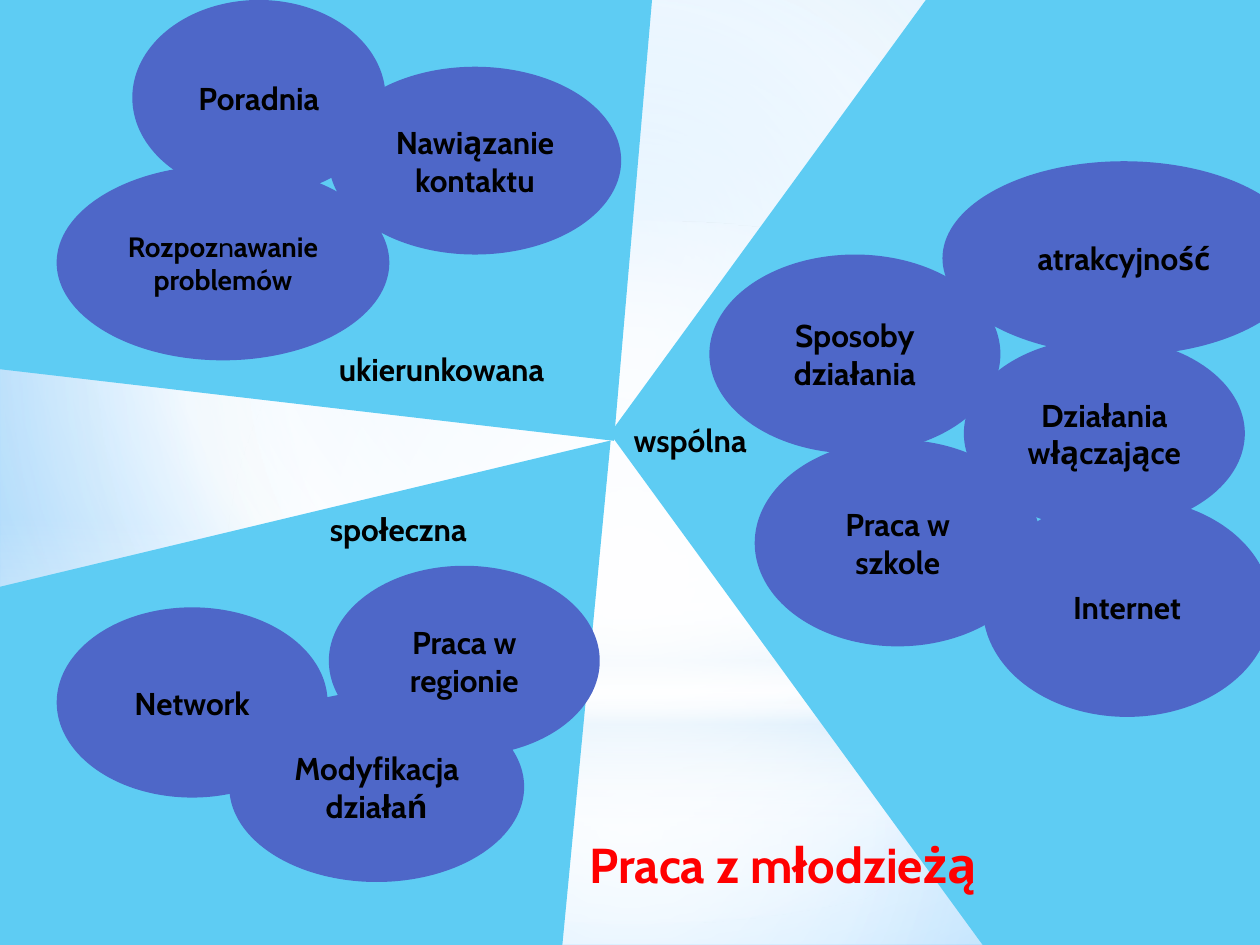
from dataclasses import dataclass

from lxml.etree import SubElement
from pptx import Presentation
from pptx.dml.color import RGBColor
from pptx.enum.shapes import MSO_SHAPE
from pptx.enum.text import MSO_ANCHOR, MSO_AUTO_SIZE, PP_ALIGN
from pptx.oxml.ns import qn
from pptx.util import Inches, Pt


@dataclass(frozen=True)
class Theme:
    font: str = "Cabin"
    wedge: str = "5ECCF3"
    bubble: str = "4E67C8"
    ink: str = "000000"
    title: str = "FF0000"
    white: str = "FFFFFF"
    haze: str = "B4DCFA"
    title_size: int = 28
    body_size: int = 18
    small_size: int = 16


THEME = Theme()
CENTRE = (50, 50, 50, 50)


@dataclass(frozen=True)
class Bubble:
    """Runs alternate between bold and regular; box is relative to the sector."""
    box: tuple
    runs: tuple
    size: int = THEME.body_size


@dataclass(frozen=True)
class Sector:
    origin: tuple
    wedge: tuple
    rotation: float
    label: str
    label_box: tuple
    bubbles: tuple


SECTORS = (
    Sector((4.93, 1.28), (-5.13, -0.73, 15.86, 5.78), 270,
           "wspólna", (0, 2.01, 2.33, 0.4), (
               Bubble((2.72, 1.4, 2.23, 1.52), ("Działania włączające",)),
               Bubble((1.06, 2.21, 2.27, 1.64), ("Praca w szkole",)),
               Bubble((2.87, 2.67, 2.29, 1.74), ("Internet",)),
               Bubble((2.55, 0, 2.88, 1.54), ("atrakcyjność",)),
               Bubble((0.7, 0.74, 2.31, 1.58), ("Sposoby działania",)))),
    Sector((0.45, 0), (-3.26, -1.8, 11.59, 5.97), 140.8,
           "ukierunkowana", (2.14, 2.73, 2.81, 0.4), (
               Bubble((0, 1.31, 2.64, 1.55),
                      ("Rozpoz", "n", "awanie problemów"), THEME.small_size),
               Bubble((2.16, 0.53, 2.32, 1.49), ("Nawiązanie kontaktu",)),
               Bubble((0.6, 0, 2.01, 1.55), ("Poradnia",)))),
    Sector((0.45, 4), (-2.2, -1.28, 9.04, 6.33), 41,
           "społeczna", (2.07, 0, 2.33, 0.4), (
               Bubble((2.16, 0.49, 2.15, 1.51), ("Praca w regionie",)),
               Bubble((0, 0.82, 2.15, 1.51), ("Network",)),
               Bubble((1.37, 1.49, 2.34, 1.51), ("Modyfikacja działań",)))),
)


def within(origin, box):
    return origin[0] + box[0], origin[1] + box[1], box[2], box[3]


def add_plain(slide, kind, box, color):
    shape = slide.shapes.add_shape(kind, *map(Inches, box))
    shape.shadow.inherit = False
    shape.fill.solid()
    shape.fill.fore_color.rgb = RGBColor.from_string(color)
    shape.line.fill.background()
    return shape


def fill_gradient(properties, stops, focus=None):
    """Swap a solid fill for a circular gradient, or a vertical one without focus."""
    solid = properties.find(qn("a:solidFill"))
    gradient = properties.makeelement(qn("a:gradFill"), {"rotWithShape": "1"})
    stop_list = SubElement(gradient, qn("a:gsLst"))
    for position, color, opacity in stops:
        stop = SubElement(stop_list, qn("a:gs"), pos=str(position * 1000))
        shade = SubElement(stop, qn("a:srgbClr"), val=color)
        if opacity < 100:
            SubElement(shade, qn("a:alpha"), val=str(opacity * 1000))
    if focus:
        circle = SubElement(gradient, qn("a:path"), path="circle")
        sides = {side: str(value * 1000) for side, value in zip("ltrb", focus)}
        SubElement(circle, qn("a:fillToRect"), sides)
    else:
        SubElement(gradient, qn("a:lin"), ang="5400000", scaled="0")
    properties.replace(solid, gradient)


def write(frame, runs, size, color):
    paragraph = frame.paragraphs[0]
    for index, text in enumerate(runs):
        run = paragraph.add_run()
        run.text = text
        run.font.name = THEME.font
        run.font.size = Pt(size)
        run.font.bold = index % 2 == 0
        run.font.color.rgb = RGBColor.from_string(color)
    return paragraph


def add_text(slide, box, text, size, color):
    frame = slide.shapes.add_textbox(*map(Inches, box)).text_frame
    frame.word_wrap = True
    write(frame, (text,), size, color)
    return frame


def add_backdrop(slide, width, height):
    white, haze = THEME.white, THEME.haze
    slide.background.fill.solid()
    slide.background.fill.fore_color.rgb = RGBColor.from_string(white)
    fill_gradient(slide.element.find(".//" + qn("p:bgPr")),
                  ((0, "9ED5FF", 100), (60, white, 100), (100, "5BB9FF", 100)),
                  (20, 10, 20, 60))
    horizon = 5.58
    layers = (
        (MSO_SHAPE.RECTANGLE, (0, horizon, width, height - horizon),
         ((0, white, 91), (37, white, 76), (100, haze, 79)), CENTRE),
        (MSO_SHAPE.RECTANGLE, (0, 0, width, horizon),
         ((0, white, 89), (48, white, 62), (100, haze, 79)), CENTRE),
        (MSO_SHAPE.RECTANGLE, (0, 4.12, width, 2.5),
         ((0, white, 0), (29, white, 30), (45, haze, 40),
          (55, white, 26), (65, haze, 60), (100, white, 0)), None),
        (MSO_SHAPE.OVAL, (0, 1.75, width, horizon),
         ((0, white, 100), (56, white, 0)), CENTRE),
    )
    for kind, box, stops, focus in layers:
        layer = add_plain(slide, kind, box, white)
        fill_gradient(layer.element.spPr, stops, focus)


def add_sector(slide, sector):
    wedge = add_plain(slide, MSO_SHAPE.ISOSCELES_TRIANGLE,
                      within(sector.origin, sector.wedge), THEME.wedge)
    wedge.rotation = sector.rotation
    for bubble in sector.bubbles:
        oval = add_plain(slide, MSO_SHAPE.OVAL,
                         within(sector.origin, bubble.box), THEME.bubble)
        frame = oval.text_frame
        frame.word_wrap = True
        frame.vertical_anchor = MSO_ANCHOR.MIDDLE
        write(frame, bubble.runs, bubble.size, THEME.ink).alignment = PP_ALIGN.CENTER
    label = add_text(slide, within(sector.origin, sector.label_box),
                     sector.label, THEME.body_size, THEME.ink)
    label.auto_size = MSO_AUTO_SIZE.SHAPE_TO_FIT_TEXT


def add_title(slide, box):
    frame = add_text(slide, box, "Praca z młodzieżą", THEME.title_size, THEME.title)
    frame.vertical_anchor = MSO_ANCHOR.MIDDLE


def main():
    width, height = 10, 7.5
    deck = Presentation()
    deck.slide_width, deck.slide_height = Inches(width), Inches(height)
    slide = deck.slides.add_slide(deck.slide_layouts[6])
    add_backdrop(slide, width, height)
    for sector in SECTORS:
        add_sector(slide, sector)
    add_title(slide, (4.58, 6.43, 4.35, 0.86))
    deck.save("out.pptx")


if __name__ == "__main__":
    main()
